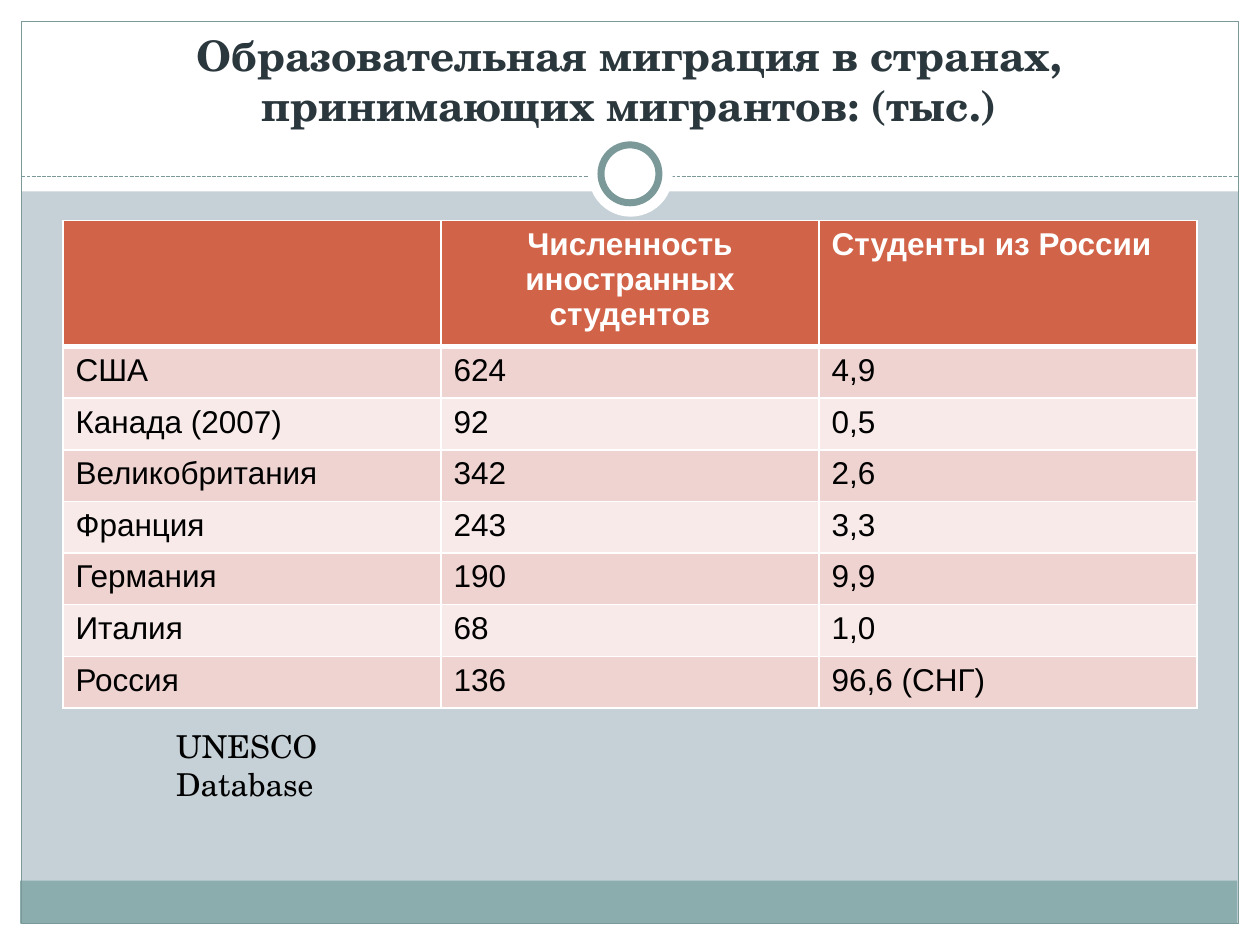
import pptx
import pptx.util
import pptx.dml.color
import pptx.enum.dml
import pptx.enum.shapes
import pptx.enum.text
import pptx.oxml
import pptx.oxml.ns
from pptx.util import Inches

COLORS = {
    "background": "C5D1D7", "white": "FFFFFF", "footer": "8CADAE", "frame": "7C999A",
    "title": "2A373D", "header": "D16349", "odd_row": "EED3D0", "even_row": "F7EAE9",
    "text": "000000",
}
COLORS = {name: pptx.dml.color.RGBColor.from_string(value) for name, value in COLORS.items()}
SHAPES = pptx.enum.shapes.MSO_SHAPE
CENTER = pptx.enum.text.PP_ALIGN.CENTER

presentation = pptx.Presentation()
presentation.slide_width = Inches(10)
presentation.slide_height = Inches(7.5)
slide = presentation.slides.add_slide(presentation.slide_layouts[6])
slide.background.fill.solid()
slide.background.fill.fore_color.rgb = COLORS["background"]


def add_plain_shape(kind, box, fill=None, line_width=None):
    """Add a shape without shadow; the outline is drawn only if it has a width."""
    shape = slide.shapes.add_shape(kind, *map(Inches, box))
    shape.shadow.inherit = False
    if fill:
        shape.fill.solid()
        shape.fill.fore_color.rgb = COLORS[fill]
    else:
        shape.fill.background()
    if line_width:
        shape.line.color.rgb = COLORS["frame"]
        shape.line.width = pptx.util.Pt(line_width)
    else:
        shape.line.fill.background()


def format_text(paragraph, font_name, size, color, bold=False):
    for run in paragraph.runs:
        run.font.name = font_name
        run.font.size = pptx.util.Pt(size)
        run.font.color.rgb = COLORS[color]
        run.font.bold = bold


# White margins, footer band and frame
for margin in [(0, 7.33, 10, 0.17), (0, 0, 10, 1.52), (0, 0, 0.17, 7.5), (9.83, 0, 0.17, 7.5)]:
    add_plain_shape(SHAPES.RECTANGLE, margin, "white")
add_plain_shape(SHAPES.RECTANGLE, (0.16, 6.99, 9.66, 0.34), "footer")
add_plain_shape(SHAPES.RECTANGLE, (0.17, 0.17, 9.66, 7.16), line_width=0.75)

# Dashed divider with a ring in its middle
divider = slide.shapes.add_connector(
    pptx.enum.shapes.MSO_CONNECTOR.STRAIGHT, Inches(0.17), Inches(1.4), Inches(9.83), Inches(1.4))
divider.line.color.rgb = COLORS["frame"]
divider.line.width = pptx.util.Pt(0.75)
divider.line.dash_style = pptx.enum.dml.MSO_LINE.SQUARE_DOT
divider_properties = divider._element.spPr
divider_properties.append(pptx.oxml.parse_xml(f"<a:effectLst {pptx.oxml.ns.nsdecls('a')}/>"))
add_plain_shape(SHAPES.OVAL, (4.67, 1.05, 0.67, 0.67), "white")
add_plain_shape(SHAPES.OVAL, (4.77, 1.15, 0.46, 0.46), "white", 4)

# Title
title = slide.shapes.add_textbox(Inches(0.33), Inches(0.25), Inches(9.33), Inches(0.83))
title.text_frame.word_wrap = True
title.text_frame.vertical_anchor = pptx.enum.text.MSO_ANCHOR.BOTTOM
title.text_frame.text = "Образовательная миграция в странах, принимающих мигрантов: (тыс.)"
title.text_frame.paragraphs[0].alignment = CENTER
format_text(title.text_frame.paragraphs[0], "TeX Gyre Schola", 24, "title", True)

# Table
rows = [
    ("", "Численность иностранных студентов", "Студенты из России"),
    ("США", "624", "4,9"),
    ("Канада (2007)", "92", "0,5"),
    ("Великобритания", "342", "2,6"),
    ("Франция", "243", "3,3"),
    ("Германия", "190", "9,9"),
    ("Италия", "68", "1,0"),
    ("Россия", "136", "96,6 (СНГ)"),
]
table = slide.shapes.add_table(
    len(rows), 3, Inches(0.5), Inches(1.75), Inches(9), Inches(3.84)).table
for row_index, values in enumerate(rows):
    is_header = row_index == 0
    table.rows[row_index].height = Inches(0.94 if is_header else 0.41)
    fill = "header" if is_header else "odd_row" if row_index % 2 else "even_row"
    for column_index, value in enumerate(values):
        cell = table.cell(row_index, column_index)
        cell.text_frame.text = value
        paragraph = cell.text_frame.paragraphs[0]
        format_text(paragraph, "Arial", 18, "white" if is_header else "text", is_header)
        if is_header and column_index == 1:
            paragraph.alignment = CENTER
        # Borders come before the fill in the cell properties
        cell_properties = cell._tc.get_or_add_tcPr()
        for side in "LRTB":
            thick = (row_index, side) in [(0, "B"), (1, "T")]
            cell_properties.append(pptx.oxml.parse_xml(
                f'<a:ln{side} {pptx.oxml.ns.nsdecls("a")} w="{pptx.util.Pt(3 if thick else 1)}">'
                f'<a:solidFill><a:srgbClr val="{COLORS["white"]}"/></a:solidFill></a:ln{side}>'))
        cell.fill.solid()
        cell.fill.fore_color.rgb = COLORS[fill]

# Data source
data_source = slide.shapes.add_textbox(Inches(1.3), Inches(5.72), Inches(2.07), Inches(0.4))
data_source.text_frame.word_wrap = True
data_source.text_frame.text = "UNESCO Database"
format_text(data_source.text_frame.paragraphs[0], "TeX Gyre Schola", 18, "text")

presentation.save("out.pptx")
